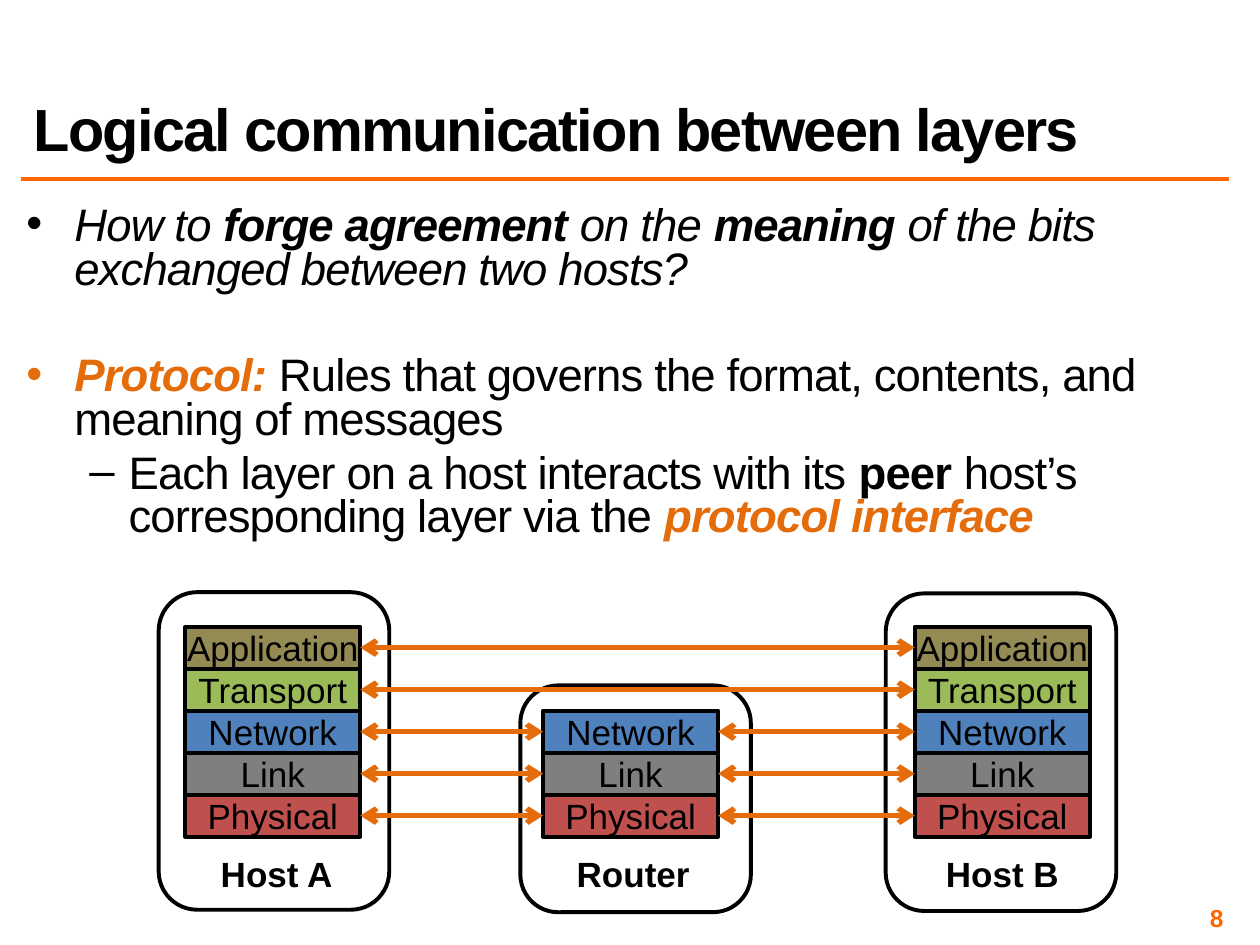
from dataclasses import dataclass

from lxml import etree
from pptx import Presentation
from pptx.dml.color import RGBColor
from pptx.enum.shapes import MSO_CONNECTOR as Connector, MSO_SHAPE as Shape
from pptx.enum.text import MSO_ANCHOR as Anchor, PP_ALIGN as Align
from pptx.oxml.ns import qn
from pptx.util import Inches, Pt


@dataclass(frozen=True)
class Theme:
    font: str = "Arial"
    black: RGBColor = RGBColor(0x00, 0x00, 0x00)
    accent: RGBColor = RGBColor(0xFF, 0x66, 0x00)
    orange: RGBColor = RGBColor(0xE4, 0x6C, 0x0A)
    title_size: Pt = Pt(34)
    body_size: Pt = Pt(26)
    label_size: Pt = Pt(20)
    number_size: Pt = Pt(14)


theme = Theme()
LAYERS = {
    "Application": RGBColor(0x94, 0x8A, 0x54),
    "Transport": RGBColor(0x9B, 0xBB, 0x59),
    "Network": RGBColor(0x4F, 0x81, 0xBD),
    "Link": RGBColor(0x7F, 0x7F, 0x7F),
    "Physical": RGBColor(0xC0, 0x50, 0x4D),
}


def style_run(run, size, color=theme.black, bold=False, italic=False, spacing=0):
    """Spacing is between letters, in hundredths of a point."""
    font = run.font
    font.name, font.size, font.bold, font.italic = theme.font, size, bold, italic
    font.color.rgb = color
    if spacing:
        run._r.get_or_add_rPr().set("spc", str(spacing))


def add_line(start, end, color, width, arrows=False):
    line = slide.shapes.add_connector(Connector.STRAIGHT, *start, *end)
    line.line.color.rgb = color
    line.line.width = width
    properties = line._element.spPr
    if arrows:
        outline = properties.find(qn("a:ln"))
        for tag in ("a:headEnd", "a:tailEnd"):
            etree.SubElement(outline, qn(tag), type="arrow")
    etree.SubElement(properties, qn("a:effectLst"))
    return line


presentation = Presentation()
presentation.slide_width, presentation.slide_height = Inches(10), Inches(7.5)
slide = presentation.slides.add_slide(presentation.slide_layouts[6])

# Title and rule
add_line((Inches(0.17), Inches(1.42)), (Inches(9.75), Inches(1.42)), theme.accent, Pt(2))
title = slide.shapes.add_textbox(Inches(0.17), Inches(0.17), Inches(9.58), Inches(1.17))
title_frame = title.text_frame
title_frame.word_wrap = True
title_frame.vertical_anchor = Anchor.BOTTOM
title_frame.text = "Logical communication between layers"
title_frame.paragraphs[0].line_spacing = 0.8
style_run(title_frame.paragraphs[0].runs[0], theme.title_size, bold=True, spacing=-100)

# Bullets: character, left margin, hanging indent, space before, styled runs
italic = dict(italic=True)
strong = dict(bold=True)
strong_italic = dict(bold=True, italic=True)
key_term = dict(bold=True, italic=True, color=theme.orange)
bullets = [
    ("•", 0.38, 0.38, 5.7, [
        ("How to ", italic), ("forge agreement ", strong_italic),
        ("on the ", italic), ("meaning", strong_italic),
        (" of the bits exchanged between two hosts?", italic)]),
    ("•", 0.38, 0.38, 36, [
        ("Protocol: ", key_term),
        ("Rules that governs the format, contents, and meaning of messages", {})]),
    ("–", 0.81, 0.31, 5.7, [
        ("Each layer on a host interacts with its ", {}), ("peer", strong),
        (" host’s corresponding layer via the ", {}),
        ("protocol interface", key_term)]),
]
body = slide.shapes.add_textbox(Inches(0.17), Inches(1.6), Inches(9.59), Inches(2.79))
body_frame = body.text_frame
body_frame.word_wrap = True
body_frame.margin_left = body_frame.margin_right = Inches(0.04)
body_frame.margin_top = body_frame.margin_bottom = Inches(0.04)
for index, (character, margin, hanging, before, runs) in enumerate(bullets):
    paragraph = body_frame.add_paragraph() if index else body_frame.paragraphs[0]
    paragraph.line_spacing = 0.8
    paragraph.space_before = Pt(before)
    properties = paragraph._p.get_or_add_pPr()
    properties.set("marL", str(Inches(margin)))
    properties.set("indent", str(-Inches(hanging)))
    etree.SubElement(properties, qn("a:buFont"), typeface=theme.font)
    etree.SubElement(properties, qn("a:buChar"), char=character)
    for text, look in runs:
        run = paragraph.add_run()
        run.text = text
        style_run(run, theme.body_size, spacing=-50, **look)

# Layer stacks share one bottom edge; the router has only the lowest three layers
layer_width, layer_height = Inches(1.39), Inches(1 / 3)
stack_bottom = Inches(6.64)
# name, stack left, layer count, label left, frame (left, top, height)
nodes = [
    ("Host A", 1.47, 5, 1.64, (1.26, 4.7, 2.52)),
    ("Router", 4.31, 3, 4.47, (4.13, 5.44, 1.8)),
    ("Host B", 7.26, 5, 7.4, (7.03, 4.71, 2.52)),
]
stacks = []
for name, left, count, label_left, frame in nodes:
    stack = {}
    for row, layer in enumerate(list(LAYERS)[-count:]):
        top = stack_bottom - (count - row) * layer_height
        box = slide.shapes.add_shape(
            Shape.RECTANGLE, Inches(left), top, layer_width, layer_height)
        box.shadow.inherit = False
        box.fill.solid()
        box.fill.fore_color.rgb = LAYERS[layer]
        box.line.color.rgb = theme.black
        box.line.width = Pt(2.25)
        box.text_frame.word_wrap = False
        box.text_frame.vertical_anchor = Anchor.MIDDLE
        box.text_frame.text = layer
        box.text_frame.paragraphs[0].alignment = Align.CENTER
        style_run(box.text_frame.paragraphs[0].runs[0], theme.label_size)
        stack[layer] = box
    stacks.append(stack)

    label = slide.shapes.add_textbox(
        Inches(label_left), Inches(6.72), Inches(1.11), Inches(0.44))
    label.text_frame.word_wrap = False
    label.text_frame.text = name
    label.text_frame.paragraphs[0].alignment = Align.CENTER
    style_run(label.text_frame.paragraphs[0].runs[0], theme.label_size, bold=True)

    frame_left, frame_top, frame_height = map(Inches, frame)
    outline = slide.shapes.add_shape(
        Shape.ROUNDED_RECTANGLE, frame_left, frame_top, Inches(1.83), frame_height)
    outline.shadow.inherit = False
    outline.fill.background()
    outline.line.color.rgb = theme.black
    outline.line.width = Pt(2.25)

# Each layer talks to the next node that has the same layer
for layer in LAYERS:
    peers = [stack[layer] for stack in stacks if layer in stack]
    for near, far in zip(peers, peers[1:]):
        middle = near.top + near.height // 2
        arrow = add_line((near.left + near.width, middle), (far.left, middle),
                         theme.orange, Pt(3), arrows=True)
        arrow.begin_connect(near, 3)
        arrow.end_connect(far, 1)

# Slide number
number = slide.shapes.add_textbox(Inches(7.42), Inches(7.17), Inches(2.33), Inches(0.23))
number_frame = number.text_frame
number_frame.word_wrap = True
number_frame.vertical_anchor = Anchor.MIDDLE
number_frame.margin_left = number_frame.margin_right = Inches(0.04)
number_frame.margin_top = number_frame.margin_bottom = Inches(0.04)
number_frame.text = "8"
number_frame.paragraphs[0].alignment = Align.RIGHT
style_run(number_frame.paragraphs[0].runs[0], theme.number_size, theme.accent, bold=True)

presentation.save("out.pptx")
